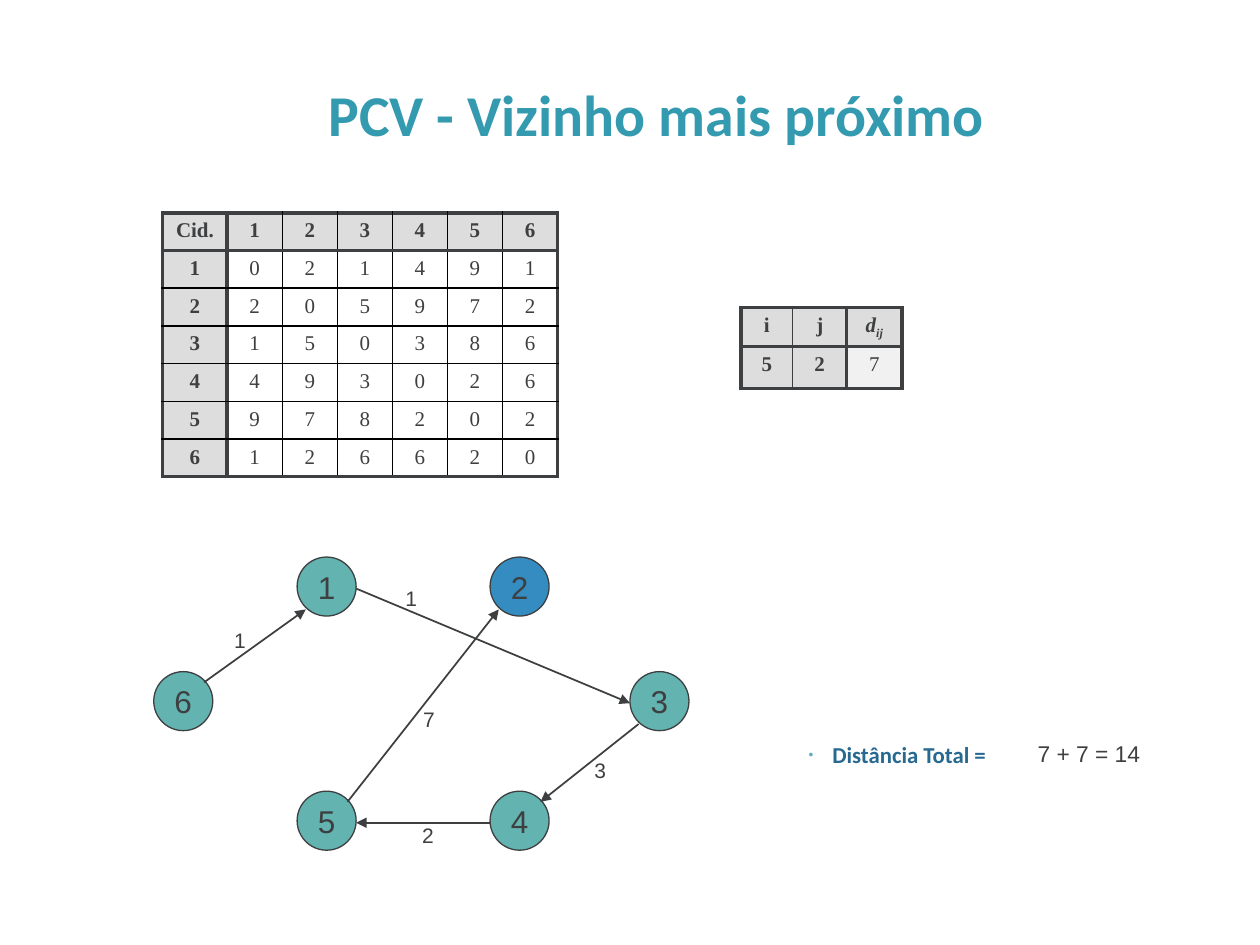
import math

from lxml import etree
from pptx import Presentation
from pptx import util as u
from pptx.dml.color import RGBColor
from pptx.enum import shapes, text
from pptx.oxml import ns

Cm, Pt = u.Cm, u.Pt
COLORS = {"ink": "3D3F41", "black": "000000", "title": "339AAF", "visited": "63B3B1",
          "current": "358CC1", "header": "DDDDDD", "result": "F1F1F1",
          "total": "286991", "bullet": "5FACC0"}
ALIGN = text.PP_ALIGN

TITLE = {"name": "Calibri", "size": Pt(33), "bold": True}
NODE = {"name": "Arial", "size": Pt(18)}
LABEL = {"name": "Arial", "size": Pt(12)}
SUM = {"name": "Arial", "size": Pt(13)}
TOTAL = {"name": "Calibri", "size": Pt(13), "bold": True}
CELL = {"name": "Times New Roman", "size": Pt(12)}

DISTANCES = [[0, 2, 1, 4, 9, 1], [2, 0, 5, 9, 7, 2], [1, 5, 0, 3, 8, 6],
             [4, 9, 3, 0, 2, 6], [9, 7, 8, 2, 0, 2], [1, 2, 6, 6, 2, 0]]

# City: left and top within the graph, in cm
DIAMETER = 1.19
CITIES = {1: (2.89, 0), 2: (6.78, 0), 3: (9.6, 2.31),
          4: (6.78, 4.72), 5: (2.89, 4.72), 6: (0, 2.31)}
# Start city and angle, end city and angle, distance, place of its label
ROUTE = [(6, -45, 1, 135, 1, (1.37, 1.29)), (1, 0, 3, 180, 1, (4.82, 0.45)),
         (3, 135, 4, -45, 3, (8.63, 3.91)), (4, 180, 5, 0, 2, (5.16, 5.23)),
         (5, -45, 2, 135, 7, (5.18, 2.89))]


def rgb(key):
    return RGBColor.from_string(COLORS[key])


def add_xml(parent, tag, **attributes):
    return etree.SubElement(parent, ns.qn(tag), attributes)


def write(paragraph, words, style, color="ink", align=ALIGN.CENTER):
    paragraph.alignment = align
    run = paragraph.add_run()
    run.text = words
    for key, value in style.items():
        setattr(run.font, key, value)
    run.font.color.rgb = rgb(color)
    return run


def add_text(slide, box, words, style, color="ink", align=ALIGN.CENTER, wrap=True,
             auto_size=text.MSO_AUTO_SIZE.NONE):
    frame = slide.shapes.add_textbox(*map(Cm, box)).text_frame
    frame.word_wrap = wrap
    frame.auto_size = auto_size
    write(frame.paragraphs[0], words, style, color, align)
    return frame


def add_title(slide, box):
    frame = add_text(slide, box, "PCV - Vizinho mais próximo", TITLE, "title")
    frame.vertical_anchor = text.MSO_ANCHOR.BOTTOM
    frame.paragraphs[0].line_spacing = 0.9


def add_grid(slide, box, widths, heights, thick_columns, thick_rows, thin_color):
    """Table with thick rules at the given edges and thin rules elsewhere."""
    left, top = box
    table = slide.shapes.add_table(len(heights), len(widths), Cm(left), Cm(top),
                                   Cm(sum(widths)), Cm(sum(heights))).table
    table.first_row = table.horz_banding = False
    for column, width in zip(table.columns, widths):
        column.width = Cm(width)
    for row, height in zip(table.rows, heights):
        row.height = Cm(height)
    for r in range(len(heights)):
        for c in range(len(widths)):
            edges = {"a:lnL": c in thick_columns, "a:lnR": c + 1 in thick_columns,
                     "a:lnT": r in thick_rows, "a:lnB": r + 1 in thick_rows}
            properties = table.cell(r, c)._tc.get_or_add_tcPr()
            for tag, thick in edges.items():
                line = add_xml(properties, tag, w=str(Pt(2.25 if thick else 1)))
                fill = add_xml(line, "a:solidFill")
                add_xml(fill, "a:srgbClr", val=COLORS["ink" if thick else thin_color])
    return table


def fill_cell(cell, color):
    if color:
        cell.fill.solid()
        cell.fill.fore_color.rgb = rgb(color)
    else:
        cell.fill.background()
    return cell.text_frame.paragraphs[0]


def add_distance_matrix(slide, box):
    size = len(DISTANCES) + 1
    edges = {0, 1, size}
    table = add_grid(slide, box, [1.3] + [1.11] * (size - 1), [0.76] * size,
                     edges, edges, "black")
    rows = [["Cid.", *range(1, size)]]
    rows += [[city, *values] for city, values in enumerate(DISTANCES, 1)]
    for r, values in enumerate(rows):
        for c, value in enumerate(values):
            header = r == 0 or c == 0
            paragraph = fill_cell(table.cell(r, c), "header" if header else None)
            write(paragraph, str(value), {**CELL, "bold": header})


def add_step_table(slide, box):
    table = add_grid(slide, box, [1.04, 1.09, 1.11], [0.77, 0.84],
                     {0, 2, 3}, {0, 1, 2}, "ink")
    for r, values in enumerate([["i", "j", "d"], ["5", "2", "7"]]):
        for c, value in enumerate(values):
            result = (r, c) == (1, 2)
            paragraph = fill_cell(table.cell(r, c), "result" if result else "header")
            style = {**CELL, "bold": not result, "italic": value == "d"}
            write(paragraph, value, style)
            if value == "d":
                subscript = write(paragraph, "ij", style)
                subscript._r.get_or_add_rPr().set("baseline", "-25000")


def rim_point(city, angle):
    radius = DIAMETER / 2
    x, y = CITIES[city]
    drop = 0.04  # arrows sit slightly below the exact rim points
    return (x + radius + radius * math.cos(math.radians(angle)),
            y + radius + radius * math.sin(math.radians(angle)) + drop)


def add_route_graph(slide, box):
    left, top = box
    # Cities
    for city, (x, y) in CITIES.items():
        node = slide.shapes.add_shape(shapes.MSO_SHAPE.OVAL, Cm(left + x), Cm(top + y),
                                      Cm(DIAMETER), Cm(DIAMETER))
        node.shadow.inherit = False
        node.fill.solid()
        node.fill.fore_color.rgb = rgb("current" if city == 2 else "visited")
        node.line.color.rgb = rgb("ink")
        node.line.width = Pt(0.75)
        node.text_frame.word_wrap = False
        node.text_frame.vertical_anchor = text.MSO_ANCHOR.MIDDLE
        write(node.text_frame.paragraphs[0], str(city), NODE)
    # Arrows with their distances
    for start, start_angle, end, end_angle, distance, (x, y) in ROUTE:
        x1, y1 = rim_point(start, start_angle)
        x2, y2 = rim_point(end, end_angle)
        arrow = slide.shapes.add_connector(
            shapes.MSO_CONNECTOR.STRAIGHT, Cm(left + x1), Cm(top + y1),
            Cm(left + x2), Cm(top + y2))
        arrow.line.color.rgb = rgb("ink")
        arrow.line.width = Pt(1)
        add_xml(arrow.line._get_or_add_ln(), "a:tailEnd", type="triangle")
        add_xml(arrow._element.spPr, "a:effectLst")
        add_text(slide, (left + x, top + y, 0.74, 0.76), str(distance), LABEL,
                 wrap=False, auto_size=text.MSO_AUTO_SIZE.SHAPE_TO_FIT_TEXT)


def add_total(slide, box):
    left, top = box
    # Bulleted caption
    frame = add_text(slide, (left, top, 5.36, 1.09), "Distância Total =", TOTAL,
                     "total", ALIGN.JUSTIFY)
    paragraph = frame.paragraphs[0]
    properties = paragraph._p.get_or_add_pPr()
    properties.set("marL", str(Cm(0.48)))
    properties.set("indent", str(Cm(-0.48)))
    add_xml(add_xml(properties, "a:buClr"), "a:srgbClr", val=COLORS["bullet"])
    add_xml(properties, "a:buSzPct", val="60000")
    add_xml(properties, "a:buFont", typeface="Arial")
    add_xml(properties, "a:buChar", char="•")
    paragraph.line_spacing = 1.1
    # Sum
    add_text(slide, (left + 4.62, top + 0.03, 3, 0.81), "7 + 7 = 14", SUM,
             align=ALIGN.LEFT, auto_size=text.MSO_AUTO_SIZE.SHAPE_TO_FIT_TEXT)


def main():
    deck = Presentation()
    deck.slide_width, deck.slide_height = Cm(25.4), Cm(19.05)
    slide = deck.slides.add_slide(deck.slide_layouts[6])
    add_title(slide, (3.38, 1.55, 19.71, 1.57))
    add_distance_matrix(slide, (3.28, 4.29))
    add_step_table(slide, (14.94, 6.2))
    add_route_graph(slide, (3.1, 11.23))
    add_total(slide, (16.05, 14.76))
    deck.save("out.pptx")


if __name__ == "__main__":
    main()
